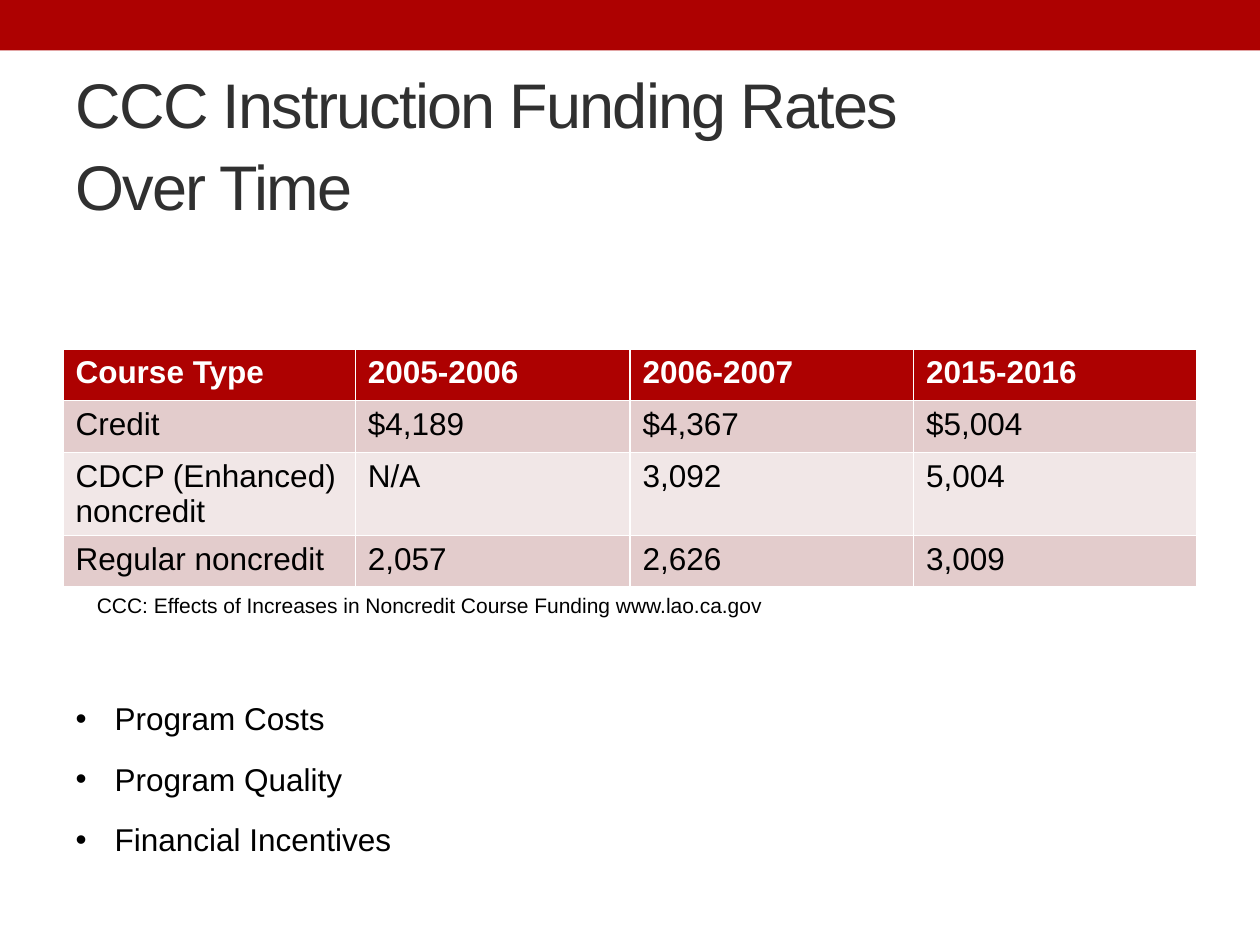
import dataclasses

import pptx
import pptx.dml.color
import pptx.enum.shapes
import pptx.enum.text
import pptx.oxml
import pptx.util
from pptx.util import Inches


@dataclasses.dataclass(frozen=True)
class Theme:
    """Colours, font and type sizes of the slide."""
    face: str = "Arial"
    accent: str = "AD0101"
    heading: str = "303030"
    ink: str = "000000"
    paper: str = "FFFFFF"
    bands: tuple = ("E3CCCC", "F1E7E7")
    title_size: int = 36
    text_size: int = 18
    source_size: int = 12


THEME = Theme()
COLUMN_WIDTHS = (2.32, 2.18, 2.25, 2.25)
ROW_HEIGHT = 0.41
RATES = (
    ("Course Type", "2005-2006", "2006-2007", "2015-2016"),
    ("Credit", "$4,189", "$4,367", "$5,004"),
    ("CDCP (Enhanced) noncredit", "N/A", "3,092", "5,004"),
    ("Regular noncredit", "2,057", "2,626", "3,009"),
)
CONCERNS = ("Program Costs", "Program Quality", "Financial Incentives")


def rgb(value):
    """Turn a hex string into a colour."""
    return pptx.dml.color.RGBColor.from_string(value)


def apply(target, formats):
    """Set every attribute named in a dict of format values."""
    for name, value in formats.items():
        setattr(target, name, value)


def place(part, box):
    """Move a part to a box given in inches."""
    apply(part, dict(zip(("left", "top", "width", "height"), map(Inches, box))))


def style_text(frame, size, color, bold=False):
    """Give all runs of a text frame one look."""
    for paragraph in frame.paragraphs:
        for run in paragraph.runs:
            apply(run.font, {"name": THEME.face, "size": pptx.util.Pt(size), "bold": bold})
            run.font.color.rgb = rgb(color)


def add_banner(slide, box):
    """Draw the coloured band along the top."""
    banner = slide.shapes.add_shape(
        pptx.enum.shapes.MSO_SHAPE.RECTANGLE, *map(Inches, box))
    banner.shadow.inherit = False
    banner.fill.solid()
    banner.fill.fore_color.rgb = rgb(THEME.accent)
    banner.line.fill.background()


def fill_title(slide, box):
    """Write the heading in the title placeholder."""
    heading = slide.shapes.title
    place(heading, box)
    frame = heading.text_frame
    frame.text = "CCC Instruction Funding Rates \vOver Time"
    apply(frame, {"word_wrap": True,
                  "auto_size": pptx.enum.text.MSO_AUTO_SIZE.NONE,
                  "vertical_anchor": pptx.enum.text.MSO_ANCHOR.MIDDLE})
    apply(frame.paragraphs[0], {"alignment": pptx.enum.text.PP_ALIGN.LEFT,
                                "line_spacing": 1.08})
    style_text(frame, THEME.title_size, THEME.heading)
    for run in frame.paragraphs[0].runs:
        run._r.get_or_add_rPr().set("spc", "-100")


def add_rates(slide, box):
    """Add the table of funding rates."""
    rates = slide.shapes.add_table(
        len(RATES), len(COLUMN_WIDTHS), *map(Inches, box)).table
    for column, width in zip(rates.columns, COLUMN_WIDTHS):
        column.width = Inches(width)
    for row_index, values in enumerate(RATES):
        rates.rows[row_index].height = Inches(ROW_HEIGHT)
        header = row_index == 0
        fill = THEME.accent if header else THEME.bands[(row_index - 1) % 2]
        for column_index, value in enumerate(values):
            cell = rates.cell(row_index, column_index)
            cell.text = value
            cell.fill.solid()
            cell.fill.fore_color.rgb = rgb(fill)
            style_text(cell.text_frame, THEME.text_size,
                       THEME.paper if header else THEME.ink, header)


def add_source(slide, box):
    """Add the source line under the table."""
    frame = slide.shapes.add_textbox(*map(Inches, box)).text_frame
    frame.word_wrap = True
    frame.text = "CCC: Effects of Increases in Noncredit Course Funding www.lao.ca.gov"
    style_text(frame, THEME.source_size, THEME.ink)


def fill_concerns(slide, box):
    """Write the bulleted list in the body placeholder."""
    concerns = slide.placeholders[1]
    place(concerns, box)
    frame = concerns.text_frame
    frame.text = "\n".join(CONCERNS)
    apply(frame, {"word_wrap": True,
                  "auto_size": pptx.enum.text.MSO_AUTO_SIZE.NONE,
                  "vertical_anchor": pptx.enum.text.MSO_ANCHOR.TOP})
    indent = Inches(0.31)
    for paragraph in frame.paragraphs:
        apply(paragraph, {"line_spacing": 1.6, "space_before": pptx.util.Pt(0)})
        properties = paragraph._p.get_or_add_pPr()
        properties.set("marL", str(indent))
        properties.set("indent", str(-indent))
        properties.append(pptx.oxml.parse_xml(
            '<a:buChar xmlns:a="http://schemas.openxmlformats.org/drawingml/2006/main" char="•"/>'))
    style_text(frame, THEME.text_size, THEME.ink)


def main():
    """Build the slide and save it."""
    deck = pptx.Presentation()
    apply(deck, {"slide_width": Inches(10), "slide_height": Inches(7.5)})
    slide = deck.slides.add_slide(deck.slide_layouts[1])
    add_banner(slide, (0, 0, 10, 0.4))
    fill_title(slide, (0.5, 0.58, 9, 1.08))
    add_rates(slide, (0.5, 2.77, sum(COLUMN_WIDTHS), ROW_HEIGHT * len(RATES)))
    add_source(slide, (0.67, 4.65, 9.12, 0.3))
    fill_concerns(slide, (0.5, 5.32, 8.89, 1.77))
    deck.save("out.pptx")


if __name__ == "__main__":
    main()
